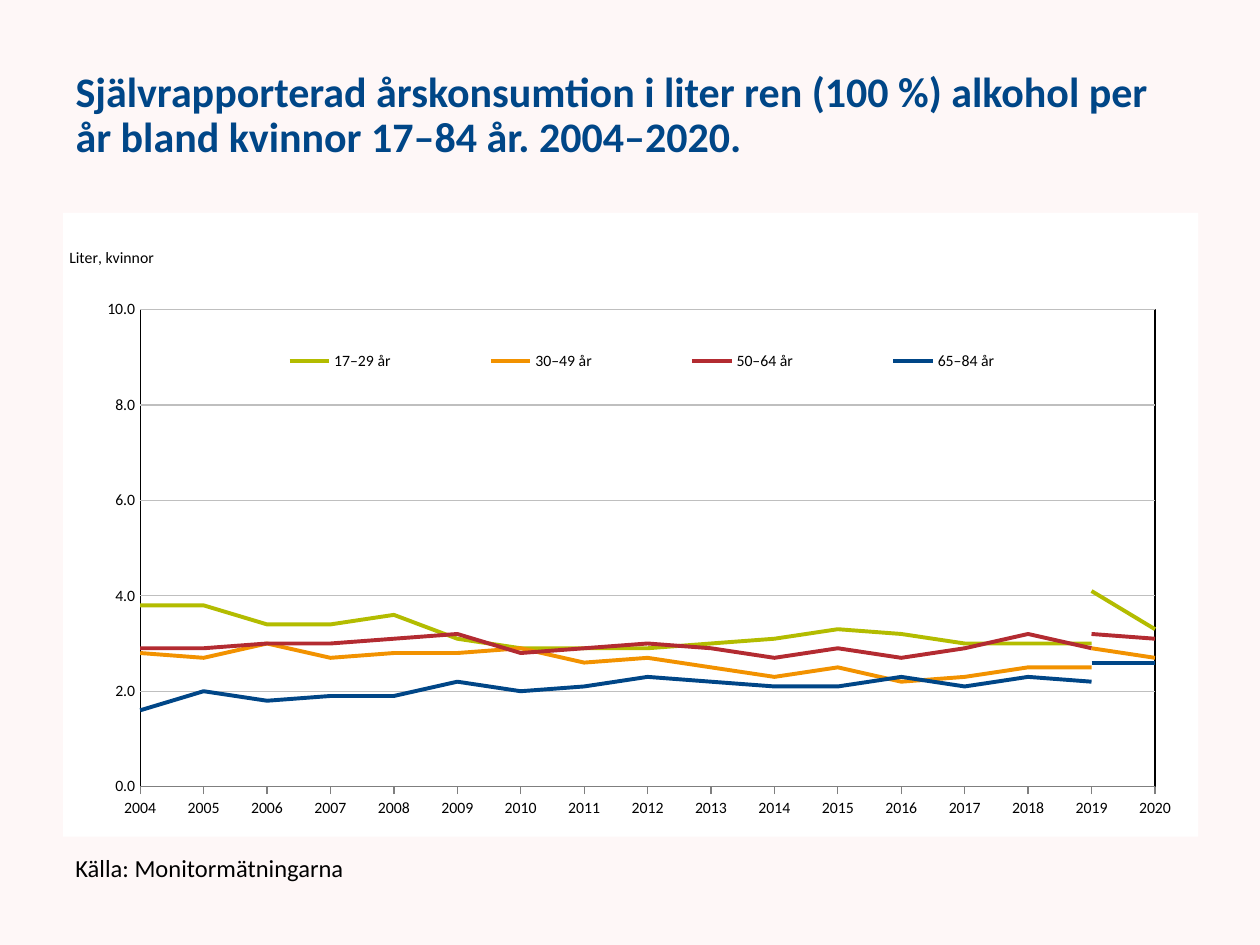
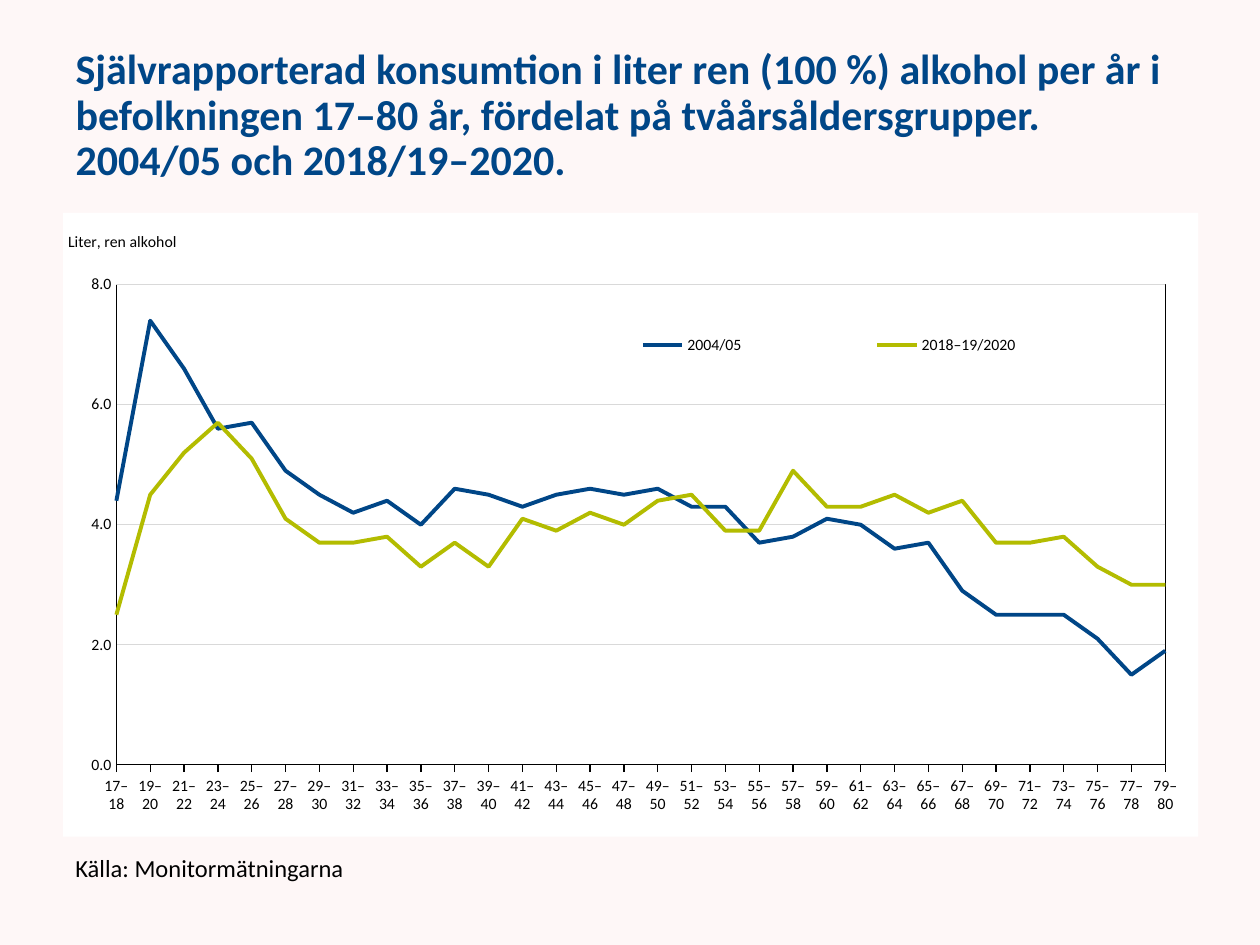
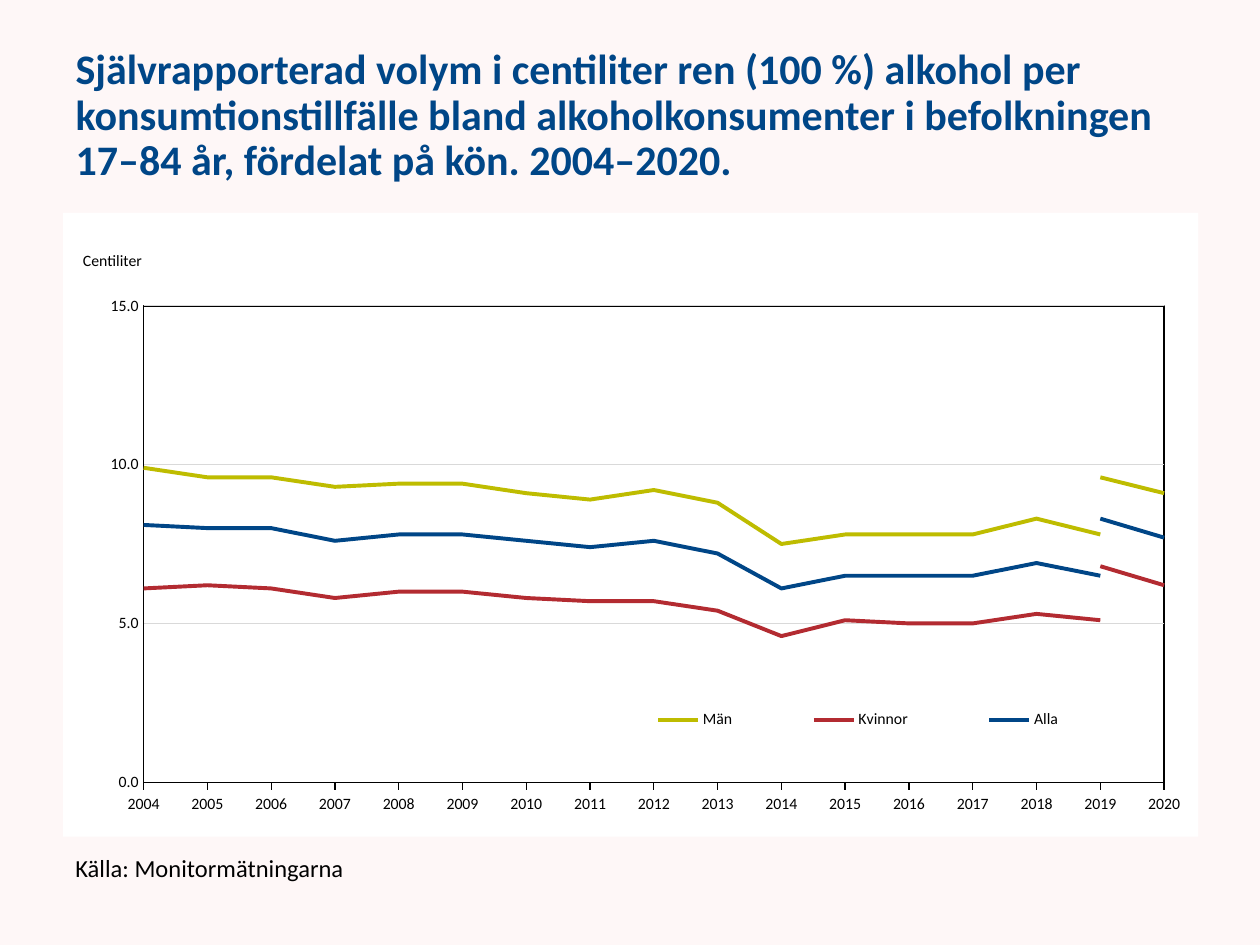
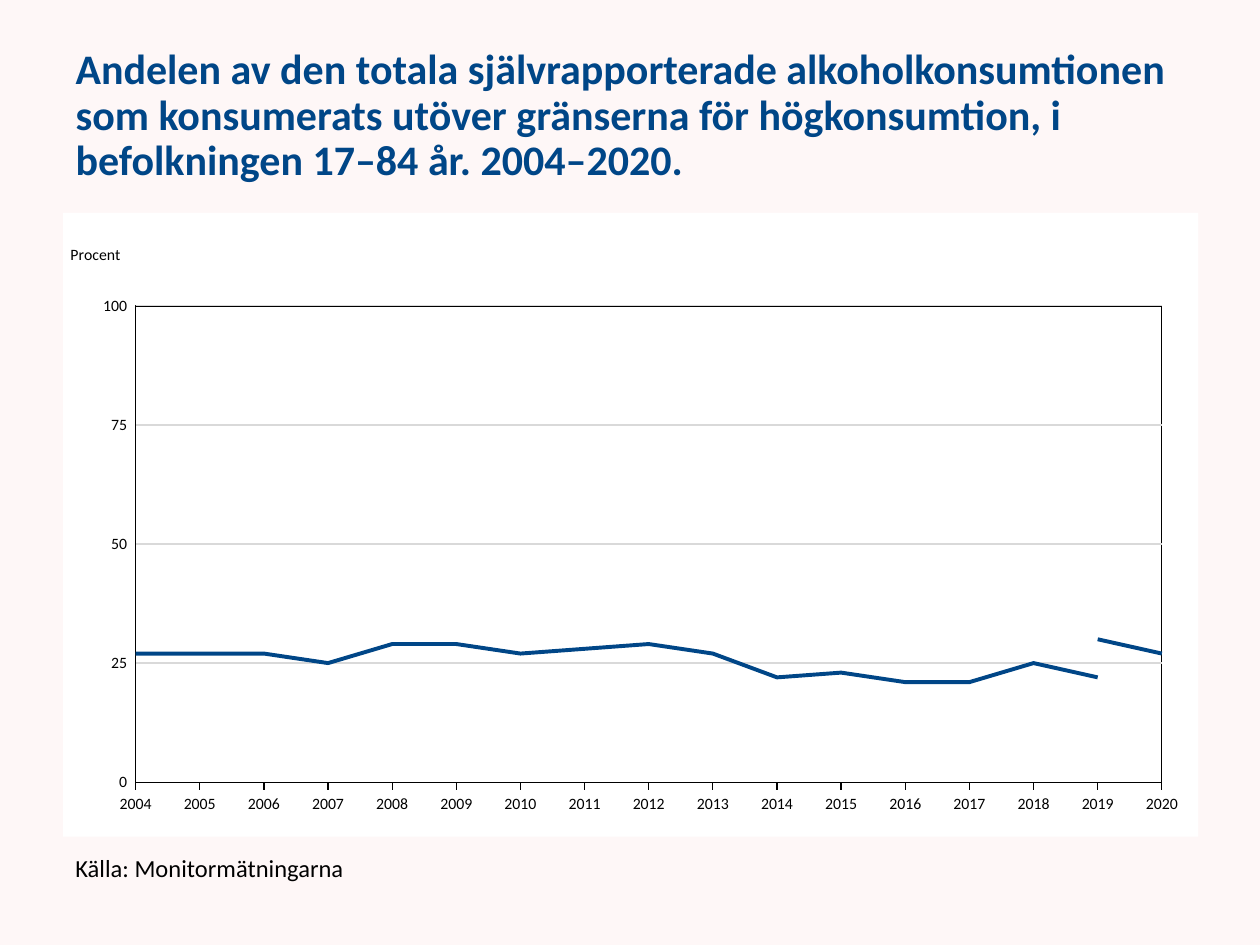
from dataclasses import dataclass

from lxml import etree
from pptx import Presentation
from pptx import util as u
from pptx.chart.data import CategoryChartData
from pptx.dml.color import RGBColor
from pptx.enum import chart as ch
from pptx.enum import text as tx
from pptx.oxml import parse_xml
from pptx.oxml.ns import nsdecls


@dataclass(frozen=True)
class Theme:
    font: str = "Calibri"
    back: str = "FEF7F7"
    panel: str = "FFFFFF"
    ink: str = "000000"
    blue: str = "004687"
    lime: str = "B3BC00"
    olive: str = "BEBC00"
    amber: str = "F29200"
    red: str = "B32B31"
    grid: str = "D9D9D9"
    head: int = 24
    note: int = 14
    label: int = 9
    thin: float = 0.75
    thick: float = 2.25


T = Theme()
NS = {
    "c": "http://schemas.openxmlformats.org/drawingml/2006/chart",
    "a": "http://schemas.openxmlformats.org/drawingml/2006/main",
}
YEARS = [str(year) for year in range(2004, 2021)]
AGES = [f"{age}–{age + 1}" for age in range(17, 80, 2)]
SOURCE = "Källa: Monitormätningarna"


# Data helpers: the yearly series break in 2019
def early(name, color, *vals):
    return name, color, [*vals, None]


def late(number, color, *vals):
    return f"Series {number}", color, [None] * 15 + list(vals)


# Text
def style(font, size, color=T.ink, bold=False):
    font.name, font.size, font.bold = T.font, u.Pt(size), bold
    font.color.rgb = RGBColor.from_string(color)


def write(shape, words, box, size, color=T.ink, bold=False):
    shape.left, shape.top, shape.width, shape.height = map(u.Inches, box)
    frame = shape.text_frame
    frame.word_wrap = True
    frame.auto_size = tx.MSO_AUTO_SIZE.NONE
    frame.text = words
    para = frame.paragraphs[0]
    para.alignment = tx.PP_ALIGN.LEFT
    para.line_spacing = 0.9
    style(para.runs[0].font, size, color, bold)
    return frame


def add_title(slide, words):
    frame = write(slide.shapes.title, words, (0.5, 0.3, 9, 1.25),
                  T.head, T.blue, True)
    frame.vertical_anchor = tx.MSO_ANCHOR.MIDDLE


def add_source(slide):
    box = slide.shapes.add_textbox(0, 0, 0, 0)
    frame = write(box, SOURCE, (0.5, 6.8, 4.5, 0.37), T.note)
    frame.margin_top = 0
    frame.vertical_anchor = tx.MSO_ANCHOR.TOP


# Chart XML
def tag(name, **attrs):
    return etree.Element(f"{{{NS['c']}}}{name}", attrs)


def place(node, box, inner=False):
    """Give a chart part a manual place, in fractions of the chart."""
    for old in node.findall("c:layout", NS):
        node.remove(old)
    layout = tag("layout")
    manual = etree.SubElement(layout, f"{{{NS['c']}}}manualLayout")
    if inner:
        manual.append(tag("layoutTarget", val="inner"))
    for side in "xy":
        manual.append(tag(f"{side}Mode", val="edge"))
    for side, val in zip("xywh", box):
        manual.append(tag(side, val=str(val)))
    overlay = node.find("c:overlay", NS)
    if overlay is None:
        node.insert(0, layout)
    else:
        overlay.addprevious(layout)
    return layout


def paint(fill=None, line=None):
    def solid(color):
        if color is None:
            return "<a:noFill/>"
        return f'<a:solidFill><a:srgbClr val="{color}"/></a:solidFill>'

    return parse_xml(
        f'<c:spPr {nsdecls("c", "a")}>{solid(fill)}'
        f'<a:ln w="{u.Pt(T.thin)}">{solid(line)}</a:ln></c:spPr>')


# Chart parts
def rule(line, color):
    if color is None:
        line.fill.background()
    else:
        line.color.rgb = RGBColor.from_string(color)
        line.width = u.Pt(T.thin)


def set_axes(chart, root, unit, spot, top, step, fmt, base, side, grid):
    cat, val = chart.category_axis, chart.value_axis
    ticks = ch.XL_TICK_MARK
    for axis, mark, color in ((cat, ticks.OUTSIDE, base),
                              (val, ticks.NONE, side)):
        axis.major_tick_mark, axis.minor_tick_mark = mark, ticks.NONE
        style(axis.tick_labels.font, T.label)
        rule(axis.format.line, color)
    val.minimum_scale, val.maximum_scale, val.major_unit = 0, top, step
    val.tick_labels.number_format = fmt
    val.tick_labels.number_format_is_linked = False
    val.has_major_gridlines = True
    rule(val.major_gridlines.format.line, grid)

    # Lines start and end on the plot edges
    crosses = root.find(".//c:valAx/c:crosses", NS)
    crosses.addnext(tag("crossBetween", val="midCat"))

    # Unit label above the value axis
    frame = val.axis_title.text_frame
    frame.text = unit
    style(frame.paragraphs[0].runs[0].font, T.label)
    title = root.find(".//c:valAx/c:title", NS)
    body = title.find(".//a:bodyPr", NS)
    body.set("rot", "0")
    body.set("vert", "horz")
    place(title, spot)


def set_legend(chart, root, box, names):
    chart.has_legend = True
    chart.legend.position = ch.XL_LEGEND_POSITION.BOTTOM
    chart.legend.include_in_layout = False
    style(chart.legend.font, T.label)
    layout = place(root.find(".//c:legend", NS), box)
    for num, name in enumerate(names):
        if name.startswith("Series"):
            entry = tag("legendEntry")
            entry.append(tag("idx", val=str(num)))
            entry.append(tag("delete", val="1"))
            layout.addprevious(entry)


def add_lines(slide, cats, rows, plot, unit, spot, top, step, fmt="0.0",
              legend=None, base=T.ink, side=T.ink, grid=T.grid):
    data = CategoryChartData(number_format="General")
    data.categories = cats
    for name, _, vals in rows:
        data.add_series(name, vals)
    box = map(u.Inches, (0.5, 1.69, 9.01, 4.95))
    chart = slide.shapes.add_chart(ch.XL_CHART_TYPE.LINE, *box, data).chart
    root = chart.element
    chart.has_title = False
    style(chart.font, T.label)
    for series, (_, color, _) in zip(chart.plots[0].series, rows):
        series.smooth = False
        series.marker.style = ch.XL_MARKER_STYLE.NONE
        series.format.line.width = u.Pt(T.thick)
        series.format.line.color.rgb = RGBColor.from_string(color)
    chart.plots[0].vary_by_categories = False
    set_axes(chart, root, unit, spot, top, step, fmt, base, side, grid)
    if legend:
        set_legend(chart, root, legend, [row[0] for row in rows])
    else:
        chart.has_legend = False

    # White panel and framed plot
    area = root.find(".//c:plotArea", NS)
    place(area, plot, inner=True)
    area.append(paint(line=T.ink))
    root.find("c:chart", NS).addnext(paint(fill=T.panel))


# Slide contents
WOMEN = [
    early("17–29 år", T.lime, 3.8, 3.8, 3.4, 3.4, 3.6, 3.1, 2.9, 2.9,
          2.9, 3, 3.1, 3.3, 3.2, 3, 3, 3),
    early("30–49 år", T.amber, 2.8, 2.7, 3, 2.7, 2.8, 2.8, 2.9, 2.6,
          2.7, 2.5, 2.3, 2.5, 2.2, 2.3, 2.5, 2.5),
    early("50–64 år", T.red, 2.9, 2.9, 3, 3, 3.1, 3.2, 2.8, 2.9,
          3, 2.9, 2.7, 2.9, 2.7, 2.9, 3.2, 2.9),
    early("65–84 år", T.blue, 1.6, 2, 1.8, 1.9, 1.9, 2.2, 2, 2.1,
          2.3, 2.2, 2.1, 2.1, 2.3, 2.1, 2.3, 2.2),
    late(5, T.lime, 4.1, 3.3),
    late(6, T.amber, 2.9, 2.7),
    late(7, T.red, 3.2, 3.1),
    late(8, T.blue, 2.6, 2.6),
]
BY_AGE = [
    ("2004/05", T.blue,
     [4.4, 7.4, 6.6, 5.6, 5.7, 4.9, 4.5, 4.2, 4.4, 4, 4.6, 4.5, 4.3, 4.5,
      4.6, 4.5, 4.6, 4.3, 4.3, 3.7, 3.8, 4.1, 4, 3.6, 3.7, 2.9, 2.5, 2.5,
      2.5, 2.1, 1.5, 1.9]),
    ("2018–19/2020", T.lime,
     [2.5, 4.5, 5.2, 5.7, 5.1, 4.1, 3.7, 3.7, 3.8, 3.3, 3.7, 3.3, 4.1, 3.9,
      4.2, 4, 4.4, 4.5, 3.9, 3.9, 4.9, 4.3, 4.3, 4.5, 4.2, 4.4, 3.7, 3.7,
      3.8, 3.3, 3, 3]),
]
VOLUME = [
    early("Män", T.olive, 9.9, 9.6, 9.6, 9.3, 9.4, 9.4, 9.1, 8.9,
          9.2, 8.8, 7.5, 7.8, 7.8, 7.8, 8.3, 7.8),
    late(2, T.olive, 9.6, 9.1),
    early("Kvinnor", T.red, 6.1, 6.2, 6.1, 5.8, 6, 6, 5.8, 5.7,
          5.7, 5.4, 4.6, 5.1, 5, 5, 5.3, 5.1),
    late(4, T.red, 6.8, 6.2),
    early("Alla", T.blue, 8.1, 8, 8, 7.6, 7.8, 7.8, 7.6, 7.4,
          7.6, 7.2, 6.1, 6.5, 6.5, 6.5, 6.9, 6.5),
    late(6, T.blue, 8.3, 7.7),
]
SHARE = [
    early("Series 1", T.blue, 27, 27, 27, 25, 29, 29, 27, 28,
          29, 27, 22, 23, 21, 21, 25, 22),
    late(2, T.blue, 30, 27),
]
# Boxes are fractions of the chart: left, top, width, height
SLIDES = [
    ("Självrapporterad årskonsumtion i liter ren (100 %) alkohol per år "
     "bland kvinnor 17–84 år. 2004–2020.",
     dict(cats=YEARS, rows=WOMEN, plot=(0.068, 0.155, 0.894, 0.765),
          unit="Liter, kvinnor", spot=(0.003, 0.05), top=10, step=2,
          legend=(0.116, 0.215, 0.788, 0.045),
          base="7F7F7F", side=None, grid="BFBFBF")),
    ("Självrapporterad konsumtion i liter ren (100 %) alkohol per år i "
     "befolkningen 17–80 år, fördelat på tvåårsåldersgrupper. "
     "2004/05 och 2018/19–2020.",
     dict(cats=AGES, rows=BY_AGE, plot=(0.047, 0.115, 0.924, 0.77),
          unit="Liter, ren alkohol", spot=(0.002, 0.024), top=8, step=2,
          legend=(0.396, 0.19, 0.558, 0.045))),
    ("Självrapporterad volym i centiliter ren (100 %) alkohol per "
     "konsumtionstillfälle bland alkoholkonsumenter i befolkningen "
     "17–84 år, fördelat på kön. 2004–2020.",
     dict(cats=YEARS, rows=VOLUME, plot=(0.071, 0.149, 0.899, 0.764),
          unit="Centiliter", spot=(0.015, 0.055), top=15, step=5,
          legend=(0.457, 0.79, 0.487, 0.045))),
    ("Andelen av den totala självrapporterade alkoholkonsumtionen som "
     "konsumerats utöver gränserna för högkonsumtion, i befolkningen "
     "17–84 år. 2004–2020.",
     dict(cats=YEARS, rows=SHARE, plot=(0.064, 0.149, 0.904, 0.764),
          unit="Procent", spot=(0.004, 0.045), top=100, step=25,
          fmt=r"0_ ;\-0\ ")),
]


def main():
    deck = Presentation()
    deck.slide_width, deck.slide_height = u.Inches(10), u.Inches(7.5)
    fill = deck.slide_master.background.fill
    fill.solid()
    fill.fore_color.rgb = RGBColor.from_string(T.back)
    for title, chart in SLIDES:
        slide = deck.slides.add_slide(deck.slide_layouts[5])
        add_title(slide, title)
        add_source(slide)
        add_lines(slide, **chart)
    deck.save("out.pptx")


if __name__ == "__main__":
    main()
